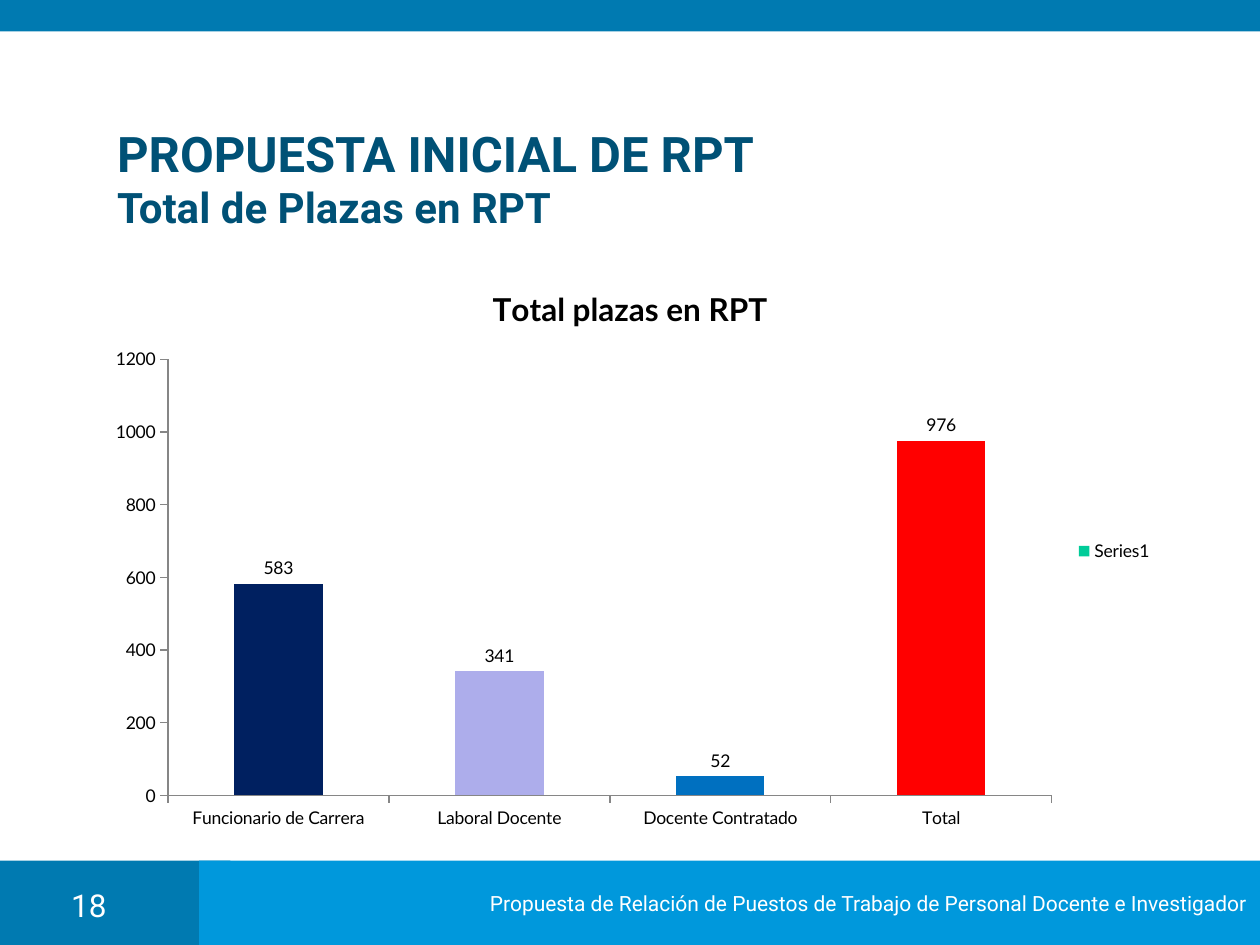
from pptx import Presentation
from pptx.chart.data import CategoryChartData
from pptx.dml.color import RGBColor
from pptx.enum.chart import XL_CHART_TYPE, XL_LABEL_POSITION, XL_LEGEND_POSITION, XL_TICK_MARK
from pptx.enum.shapes import MSO_SHAPE
from pptx.enum.text import MSO_ANCHOR, MSO_AUTO_SIZE, PP_ALIGN
from pptx.util import Inches, Pt

# Content
TITLE_LINES = [("PROPUESTA INICIAL DE RPT", 28), ("Total de Plazas en RPT", 24)]
FOOTER = "Propuesta de Relación de Puestos de Trabajo de Personal Docente e Investigador"
PAGE = "18"
CHART_TITLE = "Total plazas en RPT"
SERIES = "Series1"
PLAZAS = [
    ("Funcionario de Carrera", 583, "navy"),
    ("Laboral Docente", 341, "lilac"),
    ("Docente Contratado", 52, "blue"),
    ("Total", 976, "red"),
]
COLORS = {
    "band": "007AB1", "footer": "0098DC", "title": "005176", "white": "FFFFFF",
    "black": "000000", "axis": "868686", "series": "00CC99",
    "navy": "002060", "lilac": "ADADEB", "blue": "0070C0", "red": "FF0000",
}
BANDS = {
    "page": (0, 6.83, 1.83, 0.67, "band"),
    "footer": (1.58, 6.83, 8.42, 0.67, "footer"),
    "top": (0, 0, 10, 0.25, "band"),
}
TITLE_BOX = (0.83, 1.2, 8.35, 0.42)
PAGE_BOX = (0.35, 6.98, 0.71, 0.32)
CHART_BOX = (0.75, 2.08, 8.5, 4.59)


def color(name):
    return RGBColor.from_string(COLORS[name])


def inches(box):
    return [Inches(length) for length in box]


def set_font(font, color_name, **values):
    for key, value in values.items():
        setattr(font, key, value)
    font.color.rgb = color(color_name)


def paint(fill, color_name):
    fill.solid()
    fill.fore_color.rgb = color(color_name)


def add_band(slide, left, top, width, height, fill):
    band = slide.shapes.add_shape(MSO_SHAPE.RECTANGLE, *inches((left, top, width, height)))
    band.shadow.inherit = False
    paint(band.fill, fill)
    band.line.fill.background()
    return band


def write_line(frame, text, align, size):
    paragraph = frame.paragraphs[0]
    paragraph.alignment = align
    run = paragraph.add_run()
    run.text = text
    set_font(run.font, "white", name="Roboto", size=Pt(size))


def add_title(slide):
    title = slide.shapes.title
    title.left, title.top, title.width, title.height = inches(TITLE_BOX)
    frame = title.text_frame
    frame.auto_size = MSO_AUTO_SIZE.NONE
    frame.vertical_anchor = MSO_ANCHOR.MIDDLE
    paragraph = frame.paragraphs[0]
    paragraph.alignment = PP_ALIGN.LEFT
    for index, (text, size) in enumerate(TITLE_LINES):
        if index:
            paragraph.add_line_break()
        run = paragraph.add_run()
        run.text = text
        set_font(run.font, "title", name="Roboto", size=Pt(size), bold=True)


def add_plazas_chart(slide):
    data = CategoryChartData()
    data.categories = [name for name, _, _ in PLAZAS]
    data.add_series(SERIES, [count for _, count, _ in PLAZAS])
    chart = slide.shapes.add_chart(XL_CHART_TYPE.COLUMN_CLUSTERED, *inches(CHART_BOX), data).chart
    set_font(chart.font, "black", name="Lato", size=Pt(10))

    # Chart title and legend
    chart.has_title = True
    heading = chart.chart_title.text_frame
    heading.text = CHART_TITLE
    set_font(heading.paragraphs[0].runs[0].font, "black", name="Lato", size=Pt(18), bold=True)
    chart.has_legend = True
    chart.legend.position = XL_LEGEND_POSITION.RIGHT
    chart.legend.include_in_layout = False

    # Axes
    for axis in (chart.category_axis, chart.value_axis):
        axis.has_major_gridlines = False
        axis.major_tick_mark = XL_TICK_MARK.OUTSIDE
        axis.format.line.color.rgb = color("axis")
    scale = {"minimum_scale": 0, "maximum_scale": 1200, "major_unit": 200}
    for key, value in scale.items():
        setattr(chart.value_axis, key, value)

    # Columns and their labels
    plot = chart.plots[0]
    plot.gap_width = 150
    plot.vary_by_categories = False
    series = plot.series[0]
    paint(series.format.fill, "series")
    for index, (_, _, fill) in enumerate(PLAZAS):
        paint(series.points[index].format.fill, fill)
    labels = series.data_labels
    labels.show_value = True
    labels.position = XL_LABEL_POSITION.OUTSIDE_END


def main():
    prs = Presentation()
    prs.slide_width, prs.slide_height = Inches(10), Inches(7.5)
    slide = prs.slides.add_slide(prs.slide_layouts[5])

    # Bands and footer
    bands = {name: add_band(slide, *band) for name, band in BANDS.items()}
    footer = bands["footer"].text_frame
    footer.word_wrap = False
    footer.vertical_anchor = MSO_ANCHOR.MIDDLE
    write_line(footer, FOOTER, PP_ALIGN.RIGHT, 12)

    # Page number
    page = slide.shapes.add_textbox(*inches(PAGE_BOX)).text_frame
    page.word_wrap = True
    write_line(page, PAGE, PP_ALIGN.CENTER, 18)

    add_title(slide)
    add_plazas_chart(slide)
    prs.save("out.pptx")


if __name__ == "__main__":
    main()
